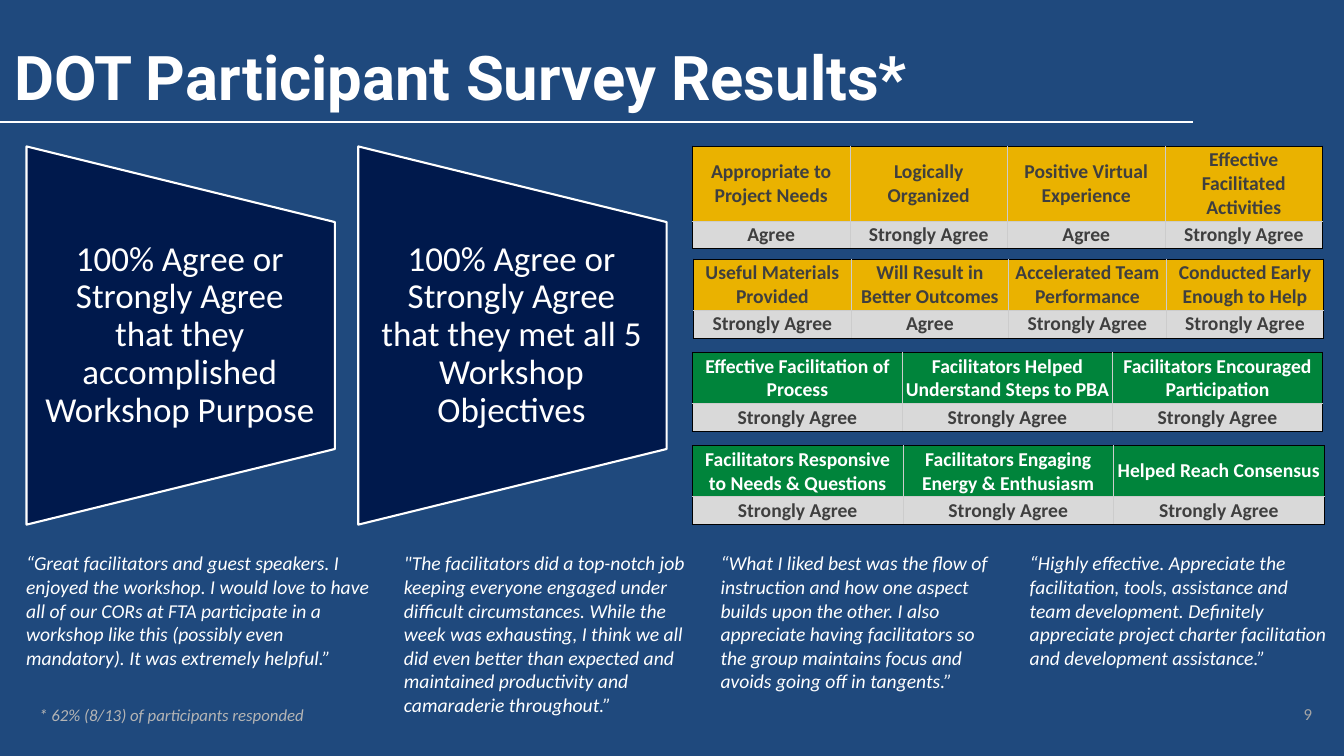
from dataclasses import dataclass

from lxml.etree import SubElement
from pptx import Presentation
from pptx.dml.color import RGBColor
from pptx.enum.shapes import MSO_CONNECTOR, MSO_SHAPE
from pptx.enum.text import MSO_ANCHOR, MSO_AUTO_SIZE, PP_ALIGN
from pptx.oxml.ns import qn
from pptx.util import Cm, Pt


@dataclass(frozen=True)
class Theme:
    background: str = "1F497D"
    navy: str = "00194C"
    white: str = "FFFFFF"
    gold: str = "EAB200"
    green: str = "00843B"
    answer: str = "D9D9D9"
    dark: str = "3F3F3F"
    grid: str = "CCCCCC"
    frame: str = "000000"
    number: str = "A5A5A5"
    footnote: str = "B5B5B5"
    heading_font: str = "Roboto"
    body_font: str = "Calibri"
    title_size: int = 44
    claim_size: int = 25
    body_size: int = 14
    small_size: int = 12


theme = Theme()


def write(frame, text, size, color, bold=False, italic=False, align=PP_ALIGN.LEFT,
          anchor=MSO_ANCHOR.TOP, font=theme.body_font, spacing=None):
    frame.word_wrap = True
    frame.vertical_anchor = anchor
    para = frame.paragraphs[0]
    para.alignment = align
    para.line_spacing = spacing
    span = para.add_run()
    span.text = text
    span.font.name = font
    span.font.size = Pt(size)
    span.font.bold = bold
    span.font.italic = italic
    span.font.color.rgb = RGBColor.from_string(color)


def add_border(cell, side, color):
    line = SubElement(cell._tc.get_or_add_tcPr(), qn(f"a:{side}"), w=str(Pt(0.75)))
    fill = SubElement(line, qn("a:solidFill"))
    SubElement(fill, qn("a:srgbClr"), val=color)


deck = Presentation()
deck.slide_width = Cm(33.87)
deck.slide_height = Cm(19.05)
page = deck.slides.add_slide(deck.slide_layouts[5])
page.background.fill.solid()
page.background.fill.fore_color.rgb = RGBColor.from_string(theme.background)

title = page.shapes.title
title.left, title.top, title.width, title.height = Cm(0.03), Cm(0.86), Cm(31.55), Cm(2.13)
title_frame = title.text_frame
title_frame.auto_size = MSO_AUTO_SIZE.NONE
title_frame.margin_left = title_frame.margin_right = Cm(0.33)
title_frame.margin_top = title_frame.margin_bottom = Cm(0.33)
write(title_frame, "DOT Participant Survey Results*", theme.title_size, theme.white,
      bold=True, font=theme.heading_font, spacing=0.9)

rule = page.shapes.add_connector(MSO_CONNECTOR.STRAIGHT, Cm(0), Cm(3.07), Cm(30.07), Cm(3.07))
rule.line.color.rgb = RGBColor.from_string(theme.white)
rule.line.width = Pt(1.5)
SubElement(rule._element.spPr, qn("a:effectLst"))

claims = [
    "100% Agree or Strongly Agree that they accomplished Workshop Purpose",
    "100% Agree or Strongly Agree that they met all 5 Workshop Objectives",
]
for index, claim in enumerate(claims):
    offset = 8.36 * index
    group = page.shapes.add_group_shape()
    panel = group.shapes.add_shape(MSO_SHAPE.FLOWCHART_MANUAL_OPERATION,
                                   Cm(-0.21 + offset), Cm(4.57), Cm(9.53), Cm(7.77))
    panel.rotation = 270
    panel.shadow.inherit = False
    panel.fill.solid()
    panel.fill.fore_color.rgb = RGBColor.from_string(theme.navy)
    panel.line.color.rgb = RGBColor.from_string(theme.white)
    panel.line.width = Pt(1.5)
    box = group.shapes.add_textbox(Cm(0.66 + offset), Cm(5.59), Cm(7.77), Cm(5.72))
    frame = box.text_frame
    frame.margin_left, frame.margin_right = Cm(0.43), Cm(0.46)
    frame.margin_top = frame.margin_bottom = Cm(0)
    write(frame, claim, theme.claim_size, theme.white, align=PP_ALIGN.CENTER,
          anchor=MSO_ANCHOR.MIDDLE, spacing=0.9)

ratings = [
    (17.45, 3.68, 15.88, 1.89, theme.gold, theme.dark, [
        ("Appropriate to Project Needs", "Agree"),
        ("Logically Organized", "Strongly Agree"),
        ("Positive Virtual Experience", "Agree"),
        ("Effective Facilitated Activities", "Strongly Agree"),
    ]),
    (17.48, 6.53, 15.88, 1.28, theme.gold, theme.dark, [
        ("Useful Materials Provided", "Strongly Agree"),
        ("Will Result in Better Outcomes", "Agree"),
        ("Accelerated Team Performance", "Strongly Agree"),
        ("Conducted Early Enough to Help", "Strongly Agree"),
    ]),
    (17.45, 8.88, 15.88, 1.28, theme.green, theme.white, [
        ("Effective Facilitation of Process", "Strongly Agree"),
        ("Facilitators Helped Understand Steps to PBA", "Strongly Agree"),
        ("Facilitators Encouraged Participation", "Strongly Agree"),
    ]),
    (17.45, 11.23, 15.92, 1.28, theme.green, theme.white, [
        ("Facilitators Responsive to Needs & Questions", "Strongly Agree"),
        ("Facilitators Engaging Energy & Enthusiasm", "Strongly Agree"),
        ("Helped Reach Consensus", "Strongly Agree"),
    ]),
]
answer_height = 0.7
for left, top, width, header_height, header_fill, header_color, columns in ratings:
    table = page.shapes.add_table(2, len(columns), Cm(left), Cm(top), Cm(width),
                                  Cm(header_height + answer_height)).table
    table.first_row = False
    table.horz_banding = False
    table.rows[0].height = Cm(header_height)
    table.rows[1].height = Cm(answer_height)
    for column, texts in enumerate(columns):
        table.columns[column].width = Cm(width / len(columns))
        for row, text in enumerate(texts):
            cell = table.cell(row, column)
            outer_sides = {
                "lnL": column == 0,
                "lnR": column == len(columns) - 1,
                "lnT": row == 0,
                "lnB": row == 1,
            }
            for side, outer in outer_sides.items():
                add_border(cell, side, theme.frame if outer else theme.grid)
            cell.fill.solid()
            cell.fill.fore_color.rgb = RGBColor.from_string(theme.answer if row else header_fill)
            cell.margin_left = cell.margin_right = Cm(0.08)
            cell.margin_top = cell.margin_bottom = Cm(0.05)
            cell.vertical_anchor = MSO_ANCHOR.MIDDLE
            write(cell.text_frame, text, theme.body_size, theme.dark if row else header_color,
                  bold=True, align=PP_ALIGN.CENTER, anchor=MSO_ANCHOR.MIDDLE)

quotes = [
    (0.41, 9.35, 3.25, "“Great facilitators and guest speakers. I enjoyed the workshop. "
     "I would love to have all of our CORs at FTA participate in a workshop like this "
     "(possibly even mandatory). It was extremely helpful.”"),
    (9.93, 7.62, 4.45, "\"The facilitators did a top-notch job keeping everyone engaged under "
     "difficult circumstances. While the week was exhausting, I think we all did even better "
     "than expected and maintained productivity and camaraderie throughout.”"),
    (17.91, 7.62, 3.84, "“What I liked best was the flow of instruction and how one aspect "
     "builds upon the other. I also appreciate having facilitators so the group maintains "
     "focus and avoids going off in tangents.”"),
    (25.7, 8.15, 3.25, "“Highly effective. Appreciate the facilitation, tools, assistance and "
     "team development. Definitely appreciate project charter facilitation and development "
     "assistance.”"),
]
for left, width, height, quote in quotes:
    box = page.shapes.add_textbox(Cm(left), Cm(13.77), Cm(width), Cm(height))
    write(box.text_frame, quote, theme.body_size, theme.white, italic=True)
    box.text_frame.auto_size = MSO_AUTO_SIZE.SHAPE_TO_FIT_TEXT

footnote = page.shapes.add_textbox(Cm(0.74), Cm(17.63), Cm(7.26), Cm(0.76))
write(footnote.text_frame, "* 62% (8/13) of participants responded", theme.small_size,
      theme.footnote, italic=True)
footnote.text_frame.word_wrap = False
footnote.text_frame.auto_size = MSO_AUTO_SIZE.SHAPE_TO_FIT_TEXT

number = page.shapes.add_textbox(Cm(31.37), Cm(17.27), Cm(2.03), Cm(1.45))
number.text_frame.margin_left = number.text_frame.margin_right = Cm(0.33)
write(number.text_frame, "9", theme.small_size, theme.number, align=PP_ALIGN.RIGHT,
      anchor=MSO_ANCHOR.MIDDLE)

deck.save("out.pptx")
